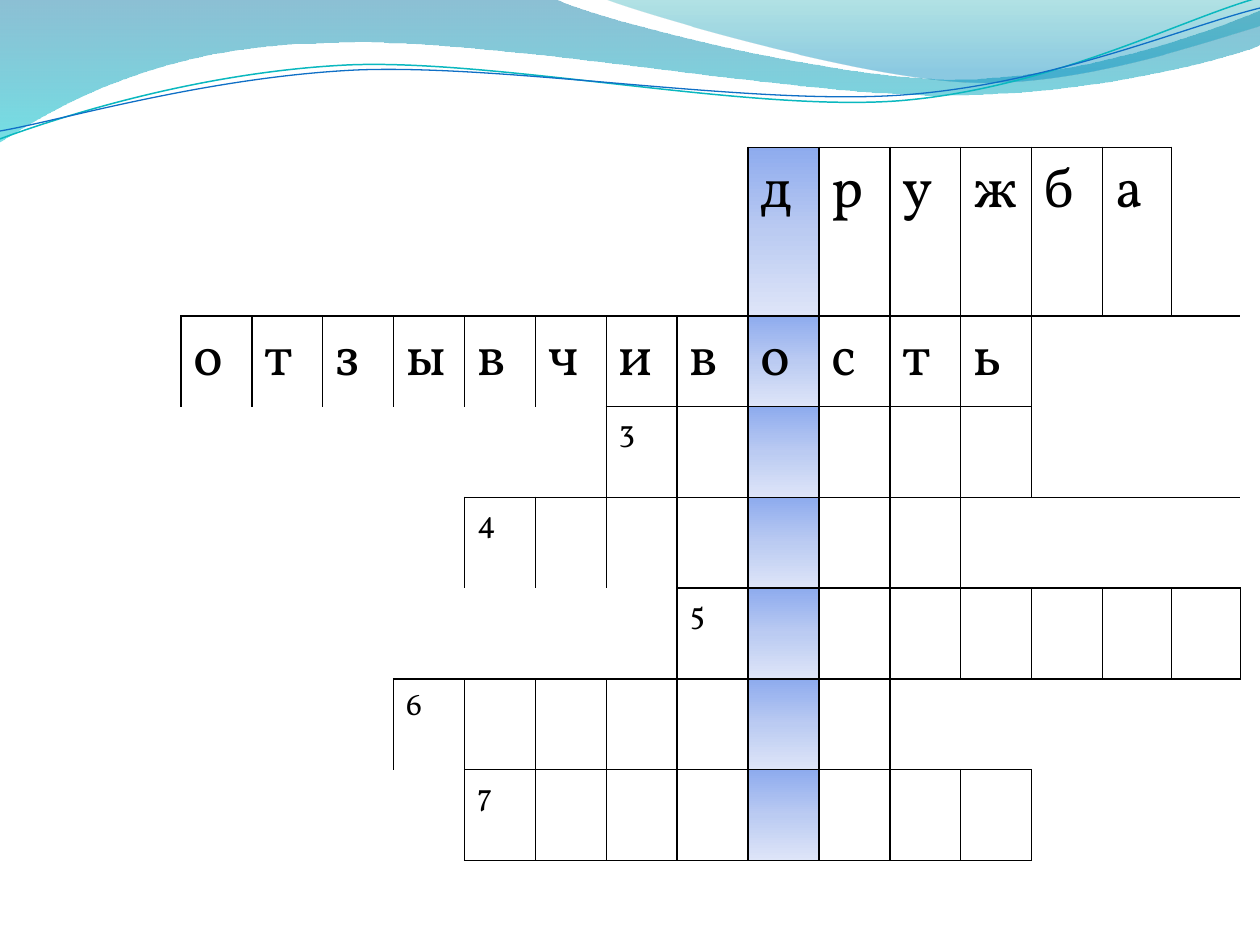
"""Build a crossword slide with a wave header and a highlighted key column."""
import math
import pptx
import pptx.util
import pptx.oxml
import pptx.oxml.ns
import pptx.dml.color

EMU = 914400 / 126
COLORS = {"black": "000000", "teal": "0AB8BF", "blue": "0F6FC6"}
FONT = "Vollkorn"
LETTER_SIZE = 32
KEY_COL = 9
KEY_STOPS = [(0, "8EABEE", 100), (50, "BBCBF2", 100), (100, "DEE5F8", 100)]

WORDS = [
    (9, "дружба", 6, LETTER_SIZE),
    (1, "отзывчивость", 12, LETTER_SIZE),
    (7, "3", 6, 18),
    (5, "4", 7, 18),
    (8, "5", 8, 18),
    (4, "6", 7, 18),
    (5, "7", 8, 18),
]
BLANKS = [
    (0, 0, 1, 9, "R"), (0, 15, 1, 1, "L"), (1, 0, 1, 1, "R"),
    (1, 13, 2, 3, "LT"), (2, 0, 1, 7, "R"), (3, 0, 1, 5, "R"),
    (3, 12, 1, 4, "LTB"), (4, 0, 1, 8, "R"), (5, 0, 1, 4, "R"),
    (5, 11, 1, 5, "LTB"), (6, 0, 1, 5, "R"), (6, 13, 1, 3, "L"),
]
COL_WIDTHS = [142] + [851 / 12] * 13 + [69, 69]
ROW_HEIGHTS = [620 / 7] * 7
FIRST_ROW_MARGIN = 84

WAVES = [
    {"curve": [(0, 0), (555, -1), (600, 21, 837, 79, 955, 79),
               (1075, 79, 1207, 33, 1260, 11), (1261, 45),
               (1239, 55, 1096, 96, 940, 95), (784, 95, 481, 35, 324, 43),
               (163, 45, 58, 105, -1, 142)],
     "stops": [(0, "0074A1", 45), (100, "00C6CF", 55)]},
    {"curve": [(604, -1), (641, 14, 859, 78, 969, 82),
               (1079, 87, 1211, 40, 1260, 26), (1260, 0)],
     "stops": [(0, "00A1A9", 30), (80, "008BBF", 45)]},
    {"curve": [(0, 139), (60, 117, 199, 72, 349, 65),
               (498, 59, 747, 112, 898, 101), (1050, 89, 1182, 19, 1258, -2)],
     "line": ("teal", 0.85), "center": (629, 72), "tilt": 2.7},
    {"curve": [(0, 131), (59, 121, 207, 77, 357, 70),
               (508, 64, 752, 106, 903, 95), (1053, 84, 1186, 26, 1260, 8)],
     "line": ("blue", 0.75), "center": (629, 74), "tilt": 2.7},
]


def px(n):
    return pptx.util.Emu(round(n * EMU))


def rgb(name):
    return pptx.dml.color.RGBColor.from_string(COLORS[name])


def xml(tag, attrs="", inner=""):
    return pptx.oxml.parse_xml(
        f'<a:{tag} {pptx.oxml.ns.nsdecls("a")} {attrs}>{inner}</a:{tag}>')


def gradient(stops):
    gs = "".join(
        f'<a:gs pos="{pos * 1000}"><a:srgbClr val="{color}">'
        f'<a:alpha val="{alpha * 1000}"/></a:srgbClr></a:gs>'
        for pos, color, alpha in stops)
    return xml("gradFill", 'rotWithShape="1"',
               f'<a:gsLst>{gs}</a:gsLst><a:lin ang="5400000" scaled="0"/>')


def turn(point, center, degrees):
    dx, dy = point[0] - center[0], point[1] - center[1]
    c, s = math.cos(math.radians(degrees)), math.sin(math.radians(degrees))
    return center[0] + dx * c - dy * s, center[1] + dx * s + dy * c


def bend(sp, curve):
    outline = sp._element.find(".//" + pptx.oxml.ns.qn("a:path"))
    corners = iter(outline.findall(pptx.oxml.ns.qn("a:lnTo")))
    for seg in curve[1:]:
        first = next(corners)
        if len(seg) == 6:
            cubic = xml("cubicBezTo")
            first.addprevious(cubic)
            for corner in (first, next(corners), next(corners)):
                cubic.append(corner[0])
                outline.remove(corner)


def add_wave(slide, wave):
    curve, tilt = wave["curve"], wave.get("tilt", 0)
    points = [seg[i:i + 2] for seg in curve for i in range(0, len(seg), 2)]
    points = [turn(p, wave.get("center", (0, 0)), tilt) for p in points]
    points = [(px(x), px(y)) for x, y in points]
    builder = slide.shapes.build_freeform(*points[0])
    builder.add_line_segments(points[1:], close="stops" in wave)
    sp = builder.convert_to_shape()
    bend(sp, curve)
    sp.rotation = -tilt
    sp.shadow.inherit = False
    sp.fill.background()
    if "stops" in wave:
        sp.line.fill.background()
        old = sp._element.spPr.find(pptx.oxml.ns.qn("a:noFill"))
        old.getparent().replace(old, gradient(wave["stops"]))
    else:
        color, width = wave["line"]
        sp.line.color.rgb = rgb(color)
        sp.line.width = pptx.util.Pt(width)


def style_cell(cell, sides, stops=None):
    tcPr = cell._tc.get_or_add_tcPr()
    for side in "LRTB":
        fill = (f'<a:solidFill><a:srgbClr val="{COLORS["black"]}"/></a:solidFill>'
                if side in sides else "<a:noFill/>")
        tcPr.append(xml("ln" + side, 'w="12700"', fill))
    if stops:
        tcPr.append(gradient(stops))
    else:
        cell.fill.background()


def set_empty_size(cell):
    p = cell.text_frame.paragraphs[0]
    p._p.append(xml("endParaRPr", f'sz="{LETTER_SIZE * 100}"',
                    f'<a:latin typeface="{FONT}"/>'))


def add_crossword(slide):
    frame = slide.shapes.add_table(
        len(ROW_HEIGHTS), len(COL_WIDTHS), px(39), px(147.4),
        px(sum(COL_WIDTHS)), px(sum(ROW_HEIGHTS)))
    table = frame.table
    table.first_row = table.horz_banding = False
    for col, width in zip(table.columns, COL_WIDTHS):
        col.width = px(width)
    for row, height in zip(table.rows, ROW_HEIGHTS):
        row.height = px(height)

    for r, (start, text, length, size) in enumerate(WORDS):
        for i in range(length):
            cell = table.cell(r, start + i)
            style_cell(cell, "LRTB", KEY_STOPS if start + i == KEY_COL else None)
            if i < len(text):
                cell.text_frame.text = text[i]
                font = cell.text_frame.paragraphs[0].runs[0].font
                font.name, font.size = FONT, pptx.util.Pt(size)
                font.color.rgb = rgb("black")
            else:
                set_empty_size(cell)
            if r == 0:
                cell.margin_bottom = px(FIRST_ROW_MARGIN)

    for top, left, height, width, sides in BLANKS:
        bottom, right = top + height - 1, left + width - 1
        for r in range(top, bottom + 1):
            for c in range(left, right + 1):
                edges = {"L": c == left, "R": c == right, "T": r == top, "B": r == bottom}
                origin = (r, c) == (top, left)
                style_cell(table.cell(r, c), [s for s in sides if origin or edges[s]])
        if height * width > 1:
            table.cell(top, left).merge(table.cell(bottom, right))


def main():
    prs = pptx.Presentation()
    prs.slide_width, prs.slide_height = px(1260), px(945)
    slide = prs.slides.add_slide(prs.slide_layouts[6])
    for wave in WAVES:
        add_wave(slide, wave)
    add_crossword(slide)
    prs.save("out.pptx")


if __name__ == "__main__":
    main()
